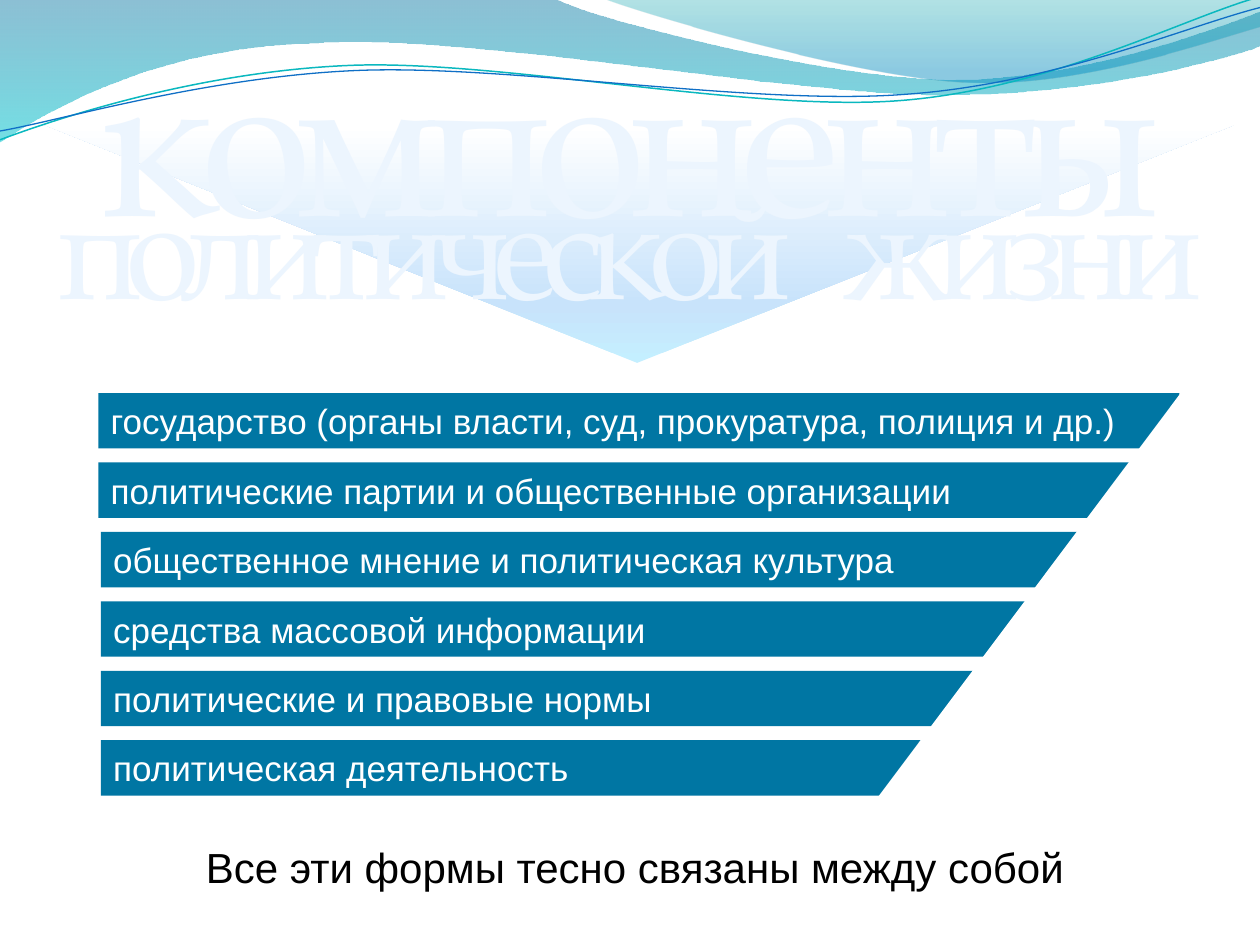
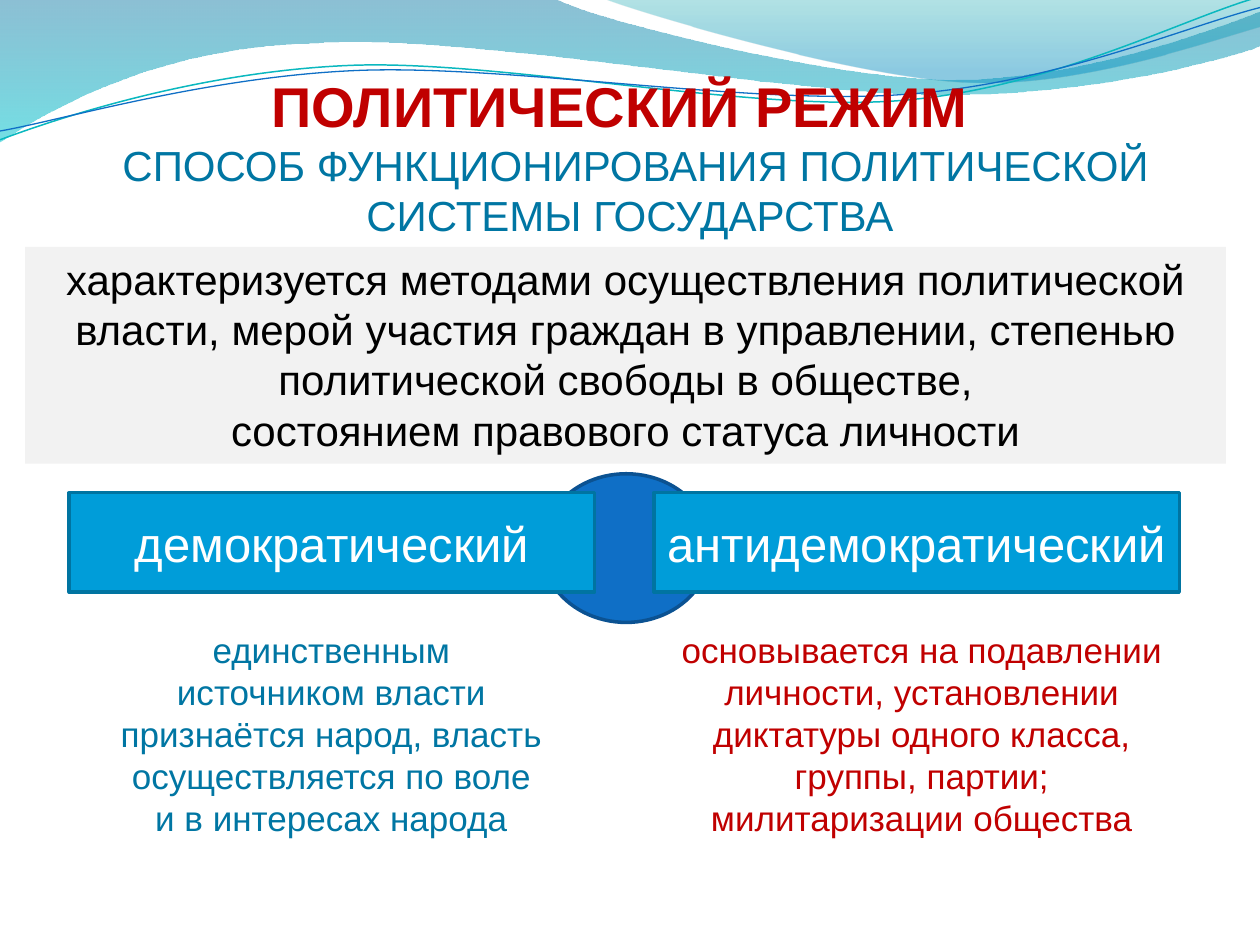
"""Builds two slides on the components of political life and on political regimes."""
from lxml import etree
from pptx import Presentation
from pptx.dml.color import RGBColor
from pptx.enum.shapes import MSO_SHAPE
from pptx.enum.text import MSO_ANCHOR, MSO_AUTO_SIZE, PP_ALIGN
from pptx.oxml.ns import qn
from pptx.util import Inches, Pt

RECT, OVAL = MSO_SHAPE.RECTANGLE, MSO_SHAPE.OVAL
TRIANGLE, CORNER = MSO_SHAPE.ISOSCELES_TRIANGLE, MSO_SHAPE.RIGHT_TRIANGLE
LEFT, CENTER = PP_ALIGN.LEFT, PP_ALIGN.CENTER
TOP, MIDDLE = MSO_ANCHOR.TOP, MSO_ANCHOR.MIDDLE
NO_AUTOSIZE = MSO_AUTO_SIZE.NONE

WIDTH, HEIGHT = 10, 7.5
SANS, SERIF = "Arial", "TeX Gyre Pagella"
COLORS = {
    "teal": "0076A3", "red": "C00000", "black": "000000", "white": "FFFFFF",
    "grey": "F2F2F2", "pale": "ECF5FE", "sky": "009DD9", "sky_edge": "0074A1",
    "blue": "0F6FC6", "blue_edge": "0B5292", "aqua": "0AB8BF",
}

BANDS = [
    ([(0, 0), (4.4, -0.01),
      ((4.76, 0.17), (6.64, 0.63), (7.58, 0.63)), ((8.53, 0.63), (9.58, 0.26), (10, 0.09)),
      (10.01, 0.36),
      ((9.83, 0.44), (8.7, 0.76), (7.46, 0.75)), ((6.22, 0.75), (3.82, 0.28), (2.57, 0.34)),
      ((1.29, 0.36), (0.46, 0.83), (-0.01, 1.13))],
     [(0, "0074A1", 45), (100, "00C6CF", 55)]),
    ([(4.79, -0.01),
      ((5.09, 0.11), (6.82, 0.62), (7.69, 0.65)), ((8.56, 0.69), (9.61, 0.32), (10, 0.21)),
      (10, 0)],
     [(0, "00A1A9", 30), (80, "008BBF", 45)]),
]
WAVES = [
    ([(0, 1.11), ((0.48, 0.93), (1.58, 0.57), (2.77, 0.52)),
      ((3.95, 0.47), (5.93, 0.89), (7.13, 0.8)), ((8.33, 0.71), (9.38, 0.15), (9.98, -0.02))],
     "aqua", 0.85),
    ([(0, 1.04), ((0.47, 0.96), (1.64, 0.61), (2.83, 0.56)),
      ((4.03, 0.51), (5.97, 0.84), (7.17, 0.75)), ((8.36, 0.67), (9.41, 0.21), (10, 0.06))],
     "blue", 0.75),
]
ARROW_STOPS = [(0, "C4EFFF", 100), (25, "C8E3FB", 100), (100, "FFFFFF", 100)]

HEADING = "компоненты"
SUBHEADING = ("политической", " ", "жизни")
COMPONENTS = [
    "государство (органы власти, суд, прокуратура, полиция и др.)",
    "политические партии и общественные организации",
    "общественное мнение и политическая культура",
    "средства массовой информации",
    "политические и правовые нормы",
    "политическая деятельность",
]
CONCLUSION = "Все эти формы тесно связаны между собой"

REGIME = "ПОЛИТИЧЕСКИЙ РЕЖИМ"
REGIME_MEANING = "СПОСОБ ФУНКЦИОНИРОВАНИЯ ПОЛИТИЧЕСКОЙ СИСТЕМЫ ГОСУДАРСТВА "
REGIME_TRAITS = ("характеризуется методами осуществления политической власти, мерой участия "
                 "граждан в управлении, степенью политической свободы в обществе,\v"
                 "состоянием правового статуса личности")
REGIME_TYPES = [
    ("демократический", 0.55, "единственным источником власти признаётся народ, власть "
     "осуществляется по воле и в интересах народа", (0.86, 4.94, 3.54, 1.78), "teal"),
    ("антидемократический", 5.19, "основывается на подавлении личности, установлении диктатуры "
     "одного класса, группы, партии; милитаризации общества", (5.19, 4.94, 4.25, 1.78), "red"),
]


def rgb(name):
    return RGBColor.from_string(COLORS[name])


def inches(box):
    return [Inches(length) for length in box]


def style(paragraph, size, color, align=LEFT, font=SANS, bold=False):
    paragraph.alignment = align
    for run in paragraph.runs:
        run.font.size, run.font.name, run.font.bold = Pt(size), font, bold
        run.font.color.rgb = rgb(color)


def track(run, points):
    run.font._element.set("spc", str(points * 100))


def write(frame, text, size, color, align=LEFT, anchor=TOP, font=SANS):
    frame.text = text
    frame.word_wrap = True
    frame.vertical_anchor = anchor
    for paragraph in frame.paragraphs:
        style(paragraph, size, color, align, font)


def add_label(slide, box, *text_style, **options):
    label = slide.shapes.add_textbox(*inches(box))
    write(label.text_frame, *text_style, **options)
    return label


def paint(shape, fill=None, line=None, weight=1):
    shape.shadow.inherit = False
    if fill:
        shape.fill.solid()
        shape.fill.fore_color.rgb = rgb(fill)
    else:
        shape.fill.background()
    if line:
        shape.line.color.rgb = rgb(line)
        shape.line.width = Pt(weight)
    else:
        shape.line.fill.background()


def add_block(slide, kind, box, fill=None, line=None, weight=1):
    block = slide.shapes.add_shape(kind, *inches(box))
    paint(block, fill, line, weight)
    return block


def shade(shape, stops):
    gradient = etree.Element(qn("a:gradFill"), rotWithShape="1")
    stop_list = etree.SubElement(gradient, qn("a:gsLst"))
    for position, color, opacity in stops:
        stop = etree.SubElement(stop_list, qn("a:gs"), pos=str(position * 1000))
        tint = etree.SubElement(stop, qn("a:srgbClr"), val=color)
        if opacity < 100:
            etree.SubElement(tint, qn("a:alpha"), val=str(opacity * 1000))
    etree.SubElement(gradient, qn("a:lin"), ang="5400000", scaled="0")
    properties = shape.element.spPr
    properties.replace(properties.find(qn("a:noFill")), gradient)


def add_outline(slide, outline, close):
    start, *parts = outline
    points = [point for part in parts for point in (part if len(part) == 3 else [part])]
    builder = slide.shapes.build_freeform(*inches(start))
    builder.add_line_segments([inches(point) for point in points], close=close)
    shape = builder.convert_to_shape()
    segments = iter(list(shape.element.iter(qn("a:lnTo"))))
    for part in parts:
        segment = next(segments)
        if len(part) == 3:
            curve = etree.Element(qn("a:cubicBezTo"))
            segment.addprevious(curve)
            for corner in (segment, next(segments), next(segments)):
                curve.append(corner[0])
                corner.getparent().remove(corner)
    return shape


def decorate_master(prs, slide):
    master_tree = prs.slide_master.shapes.element
    for outline, stops in BANDS:
        band = add_outline(slide, outline, True)
        paint(band)
        shade(band, stops)
        master_tree.append(band.element)
    for outline, color, weight in WAVES:
        wave = add_outline(slide, outline, False)
        paint(wave, None, color, weight)
        master_tree.append(wave.element)


def place_title(slide, box):
    title = slide.shapes.title
    title.left, title.top, title.width, title.height = inches(box)
    title.text_frame.auto_size = NO_AUTOSIZE
    return title


def build_components(slide):
    arrow = add_block(slide, TRIANGLE, (0.35, 0.99, 9.45, 1.89))
    arrow.rotation = 180
    arrow.adjustments[0] = 0.502
    shade(arrow, ARROW_STOPS)

    title = place_title(slide, (0, 0, WIDTH, 2.12))
    write(title.text_frame, HEADING, 120, "pale", CENTER, font=SERIF)
    track(title.text_frame.paragraphs[0].runs[0], -10)
    slide.shapes.element.append(title.element)

    subheading = add_label(slide, (0, 1.22, WIDTH, 1.4), "", 80, "pale")
    paragraph = subheading.text_frame.paragraphs[0]
    for word in SUBHEADING:
        run = paragraph.add_run()
        run.text = word
        track(run, 10 if word == " " else -10)
    style(paragraph, 80, "pale", CENTER, SERIF)
    subheading.text_frame.word_wrap = False

    top, pitch, bar_height, right = 3.12, 0.551, 0.44, 9.36
    for row, component in enumerate(COMPONENTS):
        left = 0.78 if row < 2 else 0.8
        width = 8.19 if row else right - left
        bar = add_block(slide, RECT, (left, top + row * pitch, width, bar_height), "teal")
        write(bar.text_frame, component, 20, "white", anchor=MIDDLE)
    slope = add_block(slide, CORNER, (6.89, top, 2.48, 3.31), "white")
    slope.element.spPr.find(qn("a:xfrm")).set("flipH", "1")

    add_label(slide, (0.51, 6.63, 9.06, 0.5), CONCLUSION, 24, "black", CENTER)


def build_regimes(slide):
    add_block(slide, OVAL, (4.3, 3.76, 1.34, 1.18), "blue", "blue_edge", 2)

    title = place_title(slide, (0.2, 0.52, 9.69, 1.45))
    write(title.text_frame, f"{REGIME}\n{REGIME_MEANING}", 24, "teal", CENTER)
    name, meaning_line = title.text_frame.paragraphs
    style(name, 32, "red", CENTER, bold=True)
    for paragraph, margin in ((name, 0.25), (meaning_line, 0)):
        paragraph._p.get_or_add_pPr().set("marR", str(Inches(margin)))
    slide.shapes.element.append(title.element)

    for regime, left, meaning, meaning_box, color in REGIME_TYPES:
        card = add_block(slide, RECT, (left, 3.91, 4.17, 0.79), "sky", "sky_edge", 2)
        write(card.text_frame, regime, 28, "white", CENTER, MIDDLE)
        add_label(slide, meaning_box, meaning, 20, color, CENTER)
    traits = add_block(slide, RECT, (0.2, 1.96, 9.53, 1.72), "grey")
    write(traits.text_frame, REGIME_TRAITS, 24, "black", CENTER)


def main():
    prs = Presentation()
    prs.slide_width, prs.slide_height = inches((WIDTH, HEIGHT))
    title_only = prs.slide_layouts[5]
    components, regimes = [prs.slides.add_slide(title_only) for _ in range(2)]
    decorate_master(prs, components)
    build_components(components)
    build_regimes(regimes)
    prs.save("out.pptx")


if __name__ == "__main__":
    main()
